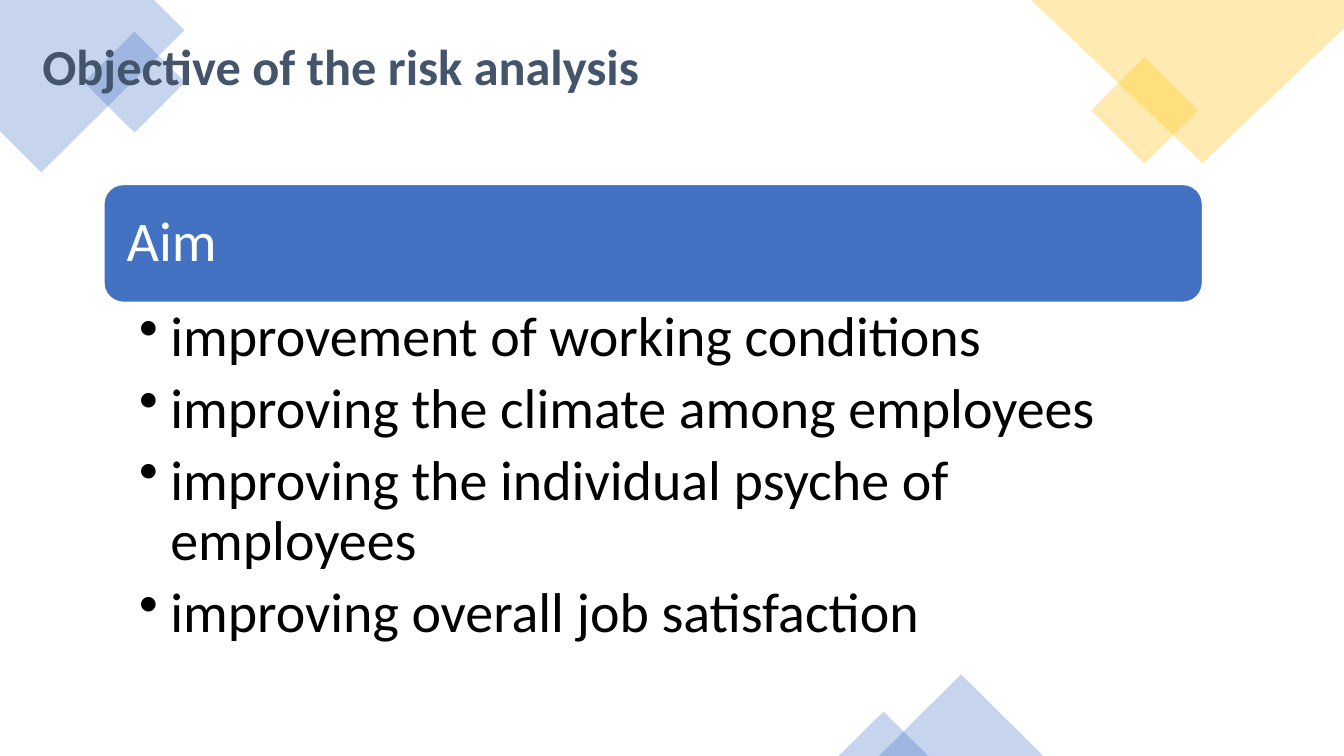
"""Build the slide on the objective of the risk analysis."""
from dataclasses import dataclass

from lxml.etree import SubElement
from pptx import Presentation
from pptx.dml.color import RGBColor
from pptx.enum.shapes import MSO_SHAPE
from pptx.enum.text import MSO_ANCHOR, MSO_AUTO_SIZE, PP_ALIGN
from pptx.oxml.ns import qn
from pptx.shapes.autoshape import Shape
from pptx.slide import Slide
from pptx.text.text import TextFrame, _Paragraph
from pptx.util import Emu, Inches, Pt

COLORS = {
    "blue": "4472C4",
    "gold": "FFC000",
    "banner": "4372C3",
    "title": "44546A",
    "white": "FFFFFF",
    "black": "000000",
}
SLIDE_WIDTH, SLIDE_HEIGHT = Inches(13.333), Inches(7.5)
COLUMN, ROW = SLIDE_WIDTH / 160, SLIDE_HEIGHT / 90
OPACITY_PERCENT = 30
BULLET_INDENT = Inches(0.31)
AIMS = (
    "improvement of working conditions",
    "improving the climate among employees",
    "improving the individual psyche of employees",
    "improving overall job satisfaction",
)


@dataclass(frozen=True)
class Box:
    column: float
    row: float
    columns: float
    rows: float

    def lengths(self) -> tuple[Emu, Emu, Emu, Emu]:
        return (Emu(round(self.column * COLUMN)), Emu(round(self.row * ROW)),
                Emu(round(self.columns * COLUMN)), Emu(round(self.rows * ROW)))


@dataclass(frozen=True)
class Ornament:
    preset: MSO_SHAPE
    box: Box
    color: str


@dataclass(frozen=True)
class Corner:
    points: tuple[tuple[float, float], ...]
    color: str


CORNERS = (
    Corner(((0, 0), (18.36, 0), (21.96, 3.6), (4.92, 20.52), (0, 15.6)), "blue"),
    Corner(((160, 0), (122.76, 0), (143.16, 19.44), (160, 3.36)), "gold"),
)
ORNAMENTS = (
    Ornament(MSO_SHAPE.DIAMOND, Box(10, 3.76, 12.04, 12.04), "blue"),
    Ornament(MSO_SHAPE.DIAMOND, Box(129.9, 6.78, 12.72, 12.72), "gold"),
    Ornament(MSO_SHAPE.ISOSCELES_TRIANGLE, Box(104.64, 80.28, 19.56, 9.72), "blue"),
    Ornament(MSO_SHAPE.ISOSCELES_TRIANGLE, Box(99.84, 84.72, 10.68, 5.28), "blue"),
)
TITLE_BOX = Box(3.84, 2.4, 138, 11.64)
BANNER_BOX = Box(12.36, 21.96, 130.8, 14.04)
LIST_BOX = Box(12.36, 36, 130.8, 43.32)


def color_of(name: str) -> RGBColor:
    return RGBColor.from_string(COLORS[name])


def tint(shape: Shape, color: str) -> None:
    shape.shadow.inherit = False
    shape.line.fill.background()
    shape.fill.solid()
    shape.fill.fore_color.rgb = color_of(color)
    color_element = shape.element.spPr.find(f"{qn('a:solidFill')}/{qn('a:srgbClr')}")
    SubElement(color_element, qn("a:alpha"), val=str(OPACITY_PERCENT * 1000))


def draw_corner(slide: Slide, corner: Corner) -> None:
    points = [(round(x * COLUMN), round(y * ROW)) for x, y in corner.points]
    builder = slide.shapes.build_freeform(*points[0])
    builder.add_line_segments(points[1:], close=True)
    tint(builder.convert_to_shape(), corner.color)


def draw_ornament(slide: Slide, ornament: Ornament) -> None:
    shape = slide.shapes.add_shape(ornament.preset, *ornament.box.lengths())
    tint(shape, ornament.color)


def set_frame(frame: TextFrame, anchor: MSO_ANCHOR, left: float, right: float, vertical: float) -> None:
    frame.word_wrap = True
    frame.auto_size = MSO_AUTO_SIZE.NONE
    frame.vertical_anchor = anchor
    frame.margin_left, frame.margin_right = Inches(left), Inches(right)
    frame.margin_top = frame.margin_bottom = Inches(vertical)


def format_paragraph(paragraph: _Paragraph, size: int, color: str, bold: bool = False) -> None:
    paragraph.alignment = PP_ALIGN.LEFT
    paragraph.line_spacing = 0.9
    for run in paragraph.runs:
        run.font.name = "Calibri"
        run.font.size = Pt(size)
        run.font.bold = bold
        run.font.color.rgb = color_of(color)


def draw_title(slide: Slide) -> None:
    title = slide.shapes.title
    title.left, title.top, title.width, title.height = TITLE_BOX.lengths()
    title.text_frame.text = "Objective of the risk analysis"
    set_frame(title.text_frame, MSO_ANCHOR.MIDDLE, 0.1, 0.1, 0.05)
    format_paragraph(title.text_frame.paragraphs[0], 36, "title", bold=True)
    title.element.getparent().append(title.element)


def draw_banner(slide: Slide) -> None:
    banner = slide.shapes.add_shape(MSO_SHAPE.ROUNDED_RECTANGLE, *BANNER_BOX.lengths())
    banner.shadow.inherit = False
    banner.fill.solid()
    banner.fill.fore_color.rgb = color_of("banner")
    banner.line.color.rgb = color_of("white")
    banner.line.width = Pt(1)
    banner.text_frame.text = "Aim"
    set_frame(banner.text_frame, MSO_ANCHOR.MIDDLE, 0.17, 0.17, 0.17)
    format_paragraph(banner.text_frame.paragraphs[0], 40, "white")


def draw_list(slide: Slide) -> None:
    frame = slide.shapes.add_textbox(*LIST_BOX.lengths()).text_frame
    frame.text = "\n".join(AIMS)
    set_frame(frame, MSO_ANCHOR.TOP, 0.35, 0.31, 0.06)
    for index, paragraph in enumerate(frame.paragraphs):
        format_paragraph(paragraph, 40, "black")
        paragraph.space_before = Pt(8 if index else 0)
        properties = paragraph._p.get_or_add_pPr()
        properties.set("marL", str(BULLET_INDENT))
        properties.set("indent", str(-BULLET_INDENT))
        SubElement(properties, qn("a:buChar"), char="•")


def main() -> None:
    presentation = Presentation()
    presentation.slide_width, presentation.slide_height = SLIDE_WIDTH, SLIDE_HEIGHT
    slide = presentation.slides.add_slide(presentation.slide_layouts[5])
    for corner in CORNERS:
        draw_corner(slide, corner)
    for ornament in ORNAMENTS:
        draw_ornament(slide, ornament)
    draw_title(slide)
    draw_banner(slide)
    draw_list(slide)
    presentation.save("out.pptx")


if __name__ == "__main__":
    main()
